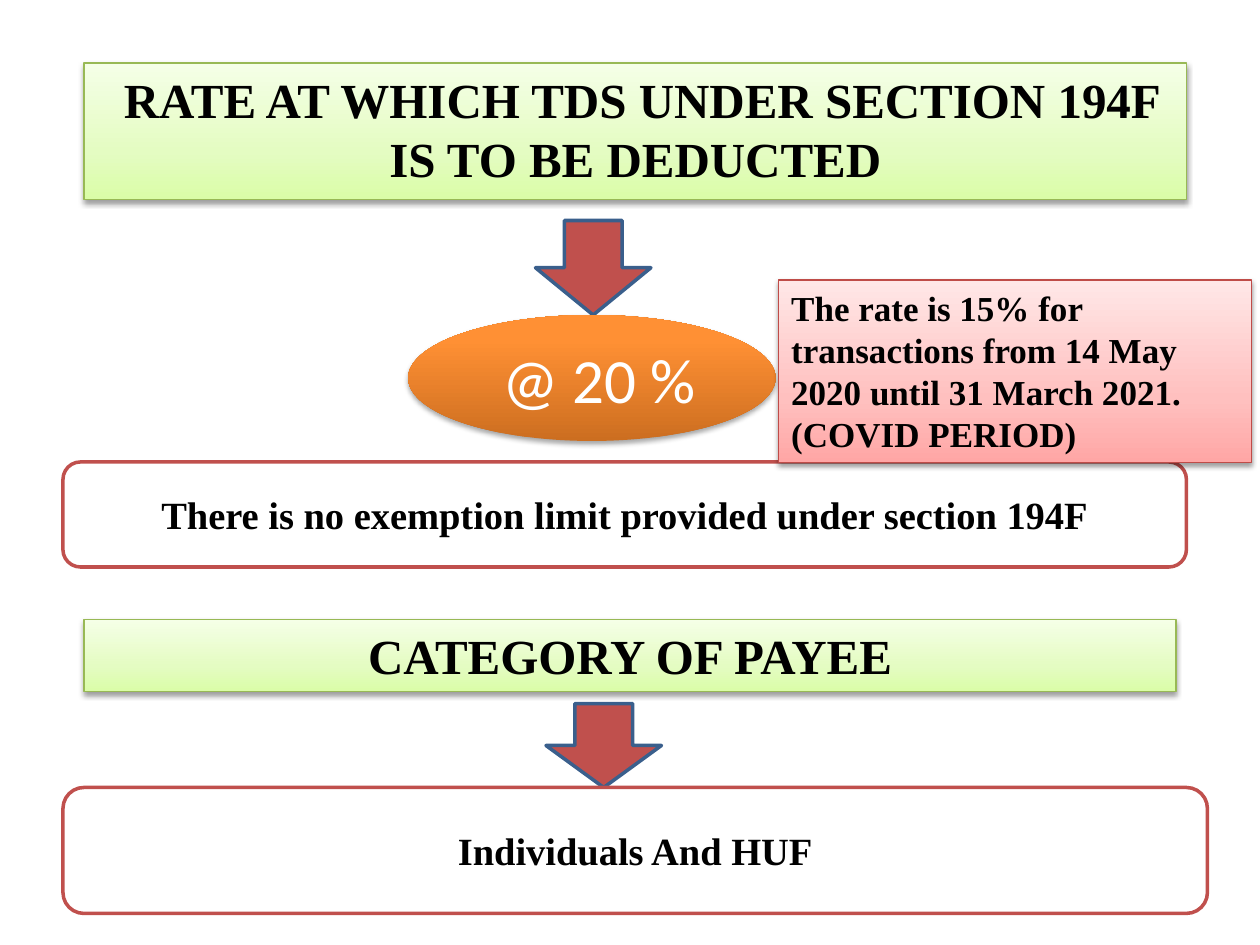
from dataclasses import dataclass
from typing import Optional

from lxml import etree
from pptx import Presentation
from pptx.dml.color import RGBColor
from pptx.enum import shapes, text
from pptx.oxml.ns import qn
from pptx.util import Pt

KIND = shapes.MSO_SHAPE
ALIGN = text.PP_ALIGN
SERIF = "Times New Roman"
GREEN = ((0, "DAFDA7"), (35, "E4FCC2"), (100, "F5FFE7"))
PINK = ((0, "FFA6A5"), (35, "FFC0BF"), (100, "FFE7E7"))
AMBER = ((0, "CC6E20"), (80, "FF9034"), (100, "FF9136"))


@dataclass(frozen=True)
class Look:
    fill: object  # a hex string, or gradient stops from bottom to top
    line: Optional[str] = None
    width: float = 0.75
    shade: int = 0  # shadow opacity in percent
    size: int = 28
    font: str = SERIF
    ink: str = "000000"
    bold: bool = True
    align: object = ALIGN.CENTER
    grow: bool = False


@dataclass(frozen=True)
class Item:
    kind: object
    look: Look
    left: float
    top: float
    width: float
    height: float
    words: str = ""


HEAD = Look(GREEN, "98B955", shade=38, grow=True)
NOTE = Look(PINK, "BF4C48", shade=38, size=20, align=ALIGN.LEFT, grow=True)
ARROW = Look("C0504D", "3A5F8C", 2)
RATE = Look(AMBER, shade=35, size=36, font="Calibri", ink="FFFFFF", bold=False)
FRAME = Look("FFFFFF", "C0504D", 2, size=22)

TITLE = Item(KIND.RECTANGLE, HEAD, 48, 36, 630, 78,
             " RATE AT WHICH TDS UNDER SECTION 194F IS TO BE DEDUCTED")
ITEMS = (
    Item(KIND.DOWN_ARROW, ARROW, 306, 126, 66, 54),
    Item(KIND.OVAL, RATE, 233.2, 180, 210, 72, " @ 20 %"),
    Item(KIND.ROUNDED_RECTANGLE, FRAME, 36, 264, 642, 60,
         "There is no exemption limit provided under section 194F"),
    Item(KIND.RECTANGLE, HEAD, 48, 354, 624, 41.2, "CATEGORY OF PAYEE"),
    Item(KIND.DOWN_ARROW, ARROW, 312, 402, 66, 48),
    Item(KIND.ROUNDED_RECTANGLE, FRAME, 36, 450, 654, 72, "Individuals And HUF"),
    Item(KIND.RECTANGLE, NOTE, 445, 160, 270, 104.4,
         "The rate is 15% for transactions from 14 May 2020 until 31 March 2021."
         "(COVID PERIOD)"),
)


def paint(code: str) -> RGBColor:
    return RGBColor.from_string(code)


def add_tag(parent, tag: str, **attrs):
    return etree.SubElement(parent, qn(tag), {k: str(v) for k, v in attrs.items()})


def set_fill(shape, fill) -> None:
    if isinstance(fill, str):
        shape.fill.solid()
        shape.fill.fore_color.rgb = paint(fill)
        return
    shape.fill.gradient()
    shape.fill.gradient_angle = 90
    stops = shape.element.spPr.find(".//" + qn("a:gsLst"))
    for stop in list(stops):
        stops.remove(stop)
    for place, code in fill:
        add_tag(add_tag(stops, "a:gs", pos=place * 1000), "a:srgbClr", val=code)


def set_line(shape, look: Look) -> None:
    if look.line is None:
        shape.line.fill.background()
        return
    shape.line.color.rgb = paint(look.line)
    shape.line.width = Pt(look.width)


def set_shade(shape, alpha: int) -> None:
    """Replace the theme shadow by a soft one below, or by none."""
    shape.shadow.inherit = False
    if alpha:
        effects = shape.element.spPr.find(qn("a:effectLst"))
        shade = add_tag(effects, "a:outerShdw", blurRad=Pt(3.1), dist=Pt(1.6),
                        dir=5400000, rotWithShape=0)
        add_tag(add_tag(shade, "a:srgbClr", val="000000"), "a:alpha", val=alpha * 1000)


def set_text(shape, words: str, look: Look) -> None:
    frame = shape.text_frame
    frame.word_wrap = True
    frame.auto_size = (text.MSO_AUTO_SIZE.SHAPE_TO_FIT_TEXT if look.grow
                       else text.MSO_AUTO_SIZE.NONE)
    frame.vertical_anchor = (text.MSO_ANCHOR.TOP if look.grow
                             else text.MSO_ANCHOR.MIDDLE)
    para = frame.paragraphs[0]
    para.alignment = look.align
    run = para.add_run()
    run.text = words
    font = run.font
    font.name, font.size, font.bold = look.font, Pt(look.size), look.bold
    font.color.rgb = paint(look.ink)


def dress(shape, item: Item) -> None:
    """Place and format a shape or placeholder."""
    shape.left, shape.top = Pt(item.left), Pt(item.top)
    shape.width, shape.height = Pt(item.width), Pt(item.height)
    set_fill(shape, item.look.fill)
    set_line(shape, item.look)
    set_shade(shape, item.look.shade)
    if item.words:
        set_text(shape, item.words, item.look)


def main() -> None:
    deck = Presentation()
    deck.slide_width, deck.slide_height = Pt(720), Pt(540)
    slide = deck.slides.add_slide(deck.slide_layouts[5])
    dress(slide.shapes.title, TITLE)
    for item in ITEMS:
        dress(slide.shapes.add_shape(item.kind, 0, 0, 0, 0), item)
    deck.save("out.pptx")


if __name__ == "__main__":
    main()
